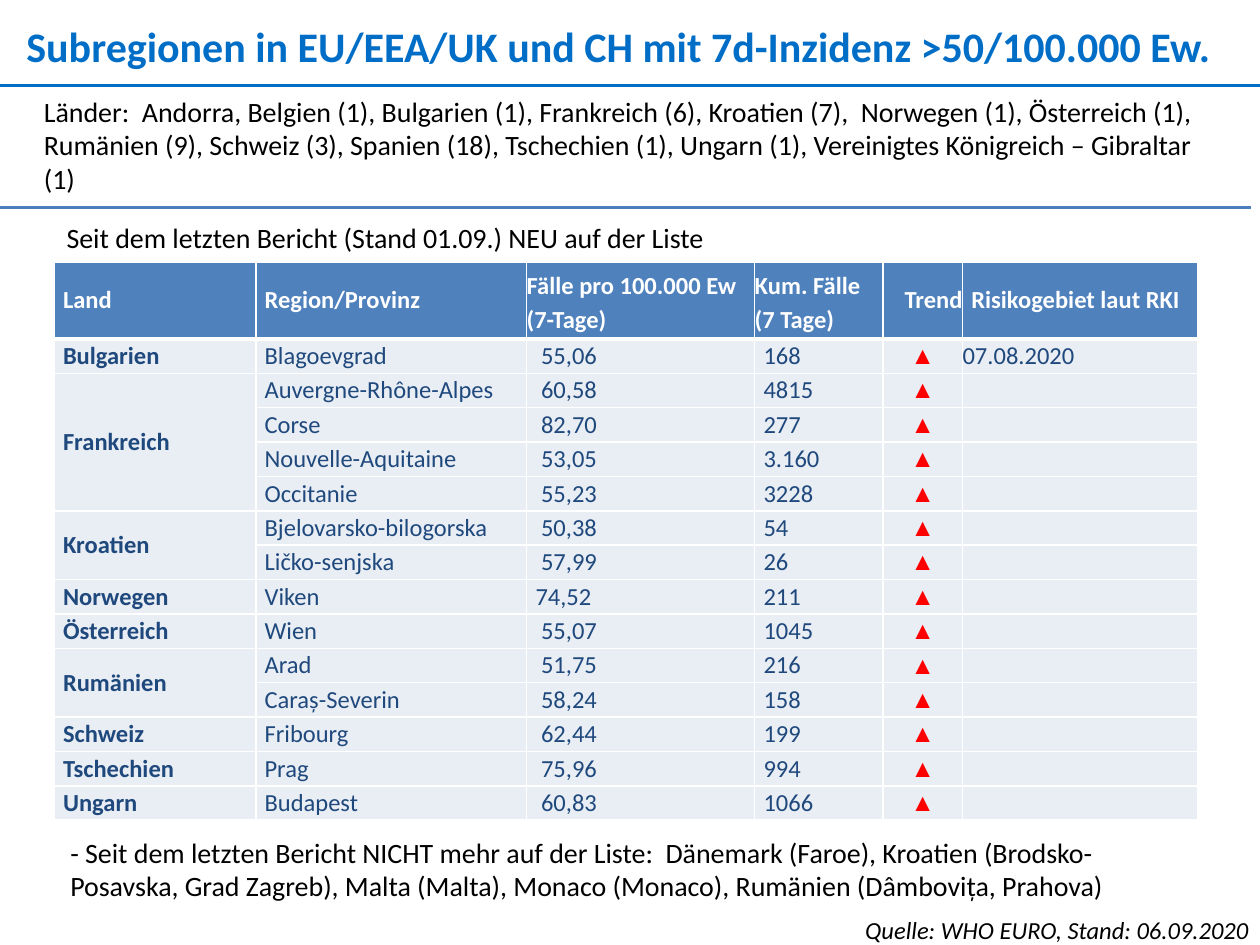
from pptx import Presentation
from pptx.dml.color import RGBColor
from pptx.enum.shapes import MSO_CONNECTOR as Conn
from pptx.enum.text import MSO_ANCHOR as Anchor, PP_ALIGN as Align
from pptx.oxml import parse_xml
from pptx.oxml.ns import nsdecls
from pptx.util import Inches, Pt

BLUE = RGBColor(0x00, 0x6E, 0xC7)
STEEL = RGBColor(0x4B, 0x7E, 0xBC)
HEAD = RGBColor(0x4F, 0x81, 0xBD)
PALE = RGBColor(0xE9, 0xED, 0xF4)
NAVY = RGBColor(0x1F, 0x49, 0x7D)
RED = RGBColor(0xFF, 0x00, 0x00)
BLACK = RGBColor(0x00, 0x00, 0x00)
WHITE = RGBColor(0xFF, 0xFF, 0xFF)

TITLE = "Subregionen in EU/EEA/UK und CH mit 7d-Inzidenz >50/100.000 Ew."
LANDS = ("Länder:  Andorra, Belgien (1), Bulgarien (1), Frankreich (6), "
         "Kroatien (7),  Norwegen (1), Österreich (1), Rumänien (9), "
         "Schweiz (3), Spanien (18), Tschechien (1), Ungarn (1), "
         "Vereinigtes Königreich – Gibraltar (1)")
NEW = "Seit dem letzten Bericht (Stand 01.09.) NEU auf der Liste"
GONE = ("- Seit dem letzten Bericht NICHT mehr auf der Liste:  "
        "Dänemark (Faroe), Kroatien (Brodsko-Posavska, Grad Zagreb), "
        "Malta (Malta), Monaco (Monaco), Rumänien (Dâmbovița, Prahova)")
SOURCE = "Quelle: WHO EURO, Stand: 06.09.2020"

HEADS = ["Land", "Region/Provinz", "Fälle pro 100.000 Ew\n(7-Tage)",
         "Kum. Fälle\n(7 Tage)", "Trend", "Risikogebiet laut RKI"]
WIDTHS = [1.6, 2.15, 1.81, 1.02, 0.63, 1.87]
# Land: (region, incidence, cases, risk area since)
DATA = {
    "Bulgarien": [("Blagoevgrad", " 55,06", "168", "07.08.2020")],
    "Frankreich": [("Auvergne-Rhône-Alpes", " 60,58", "4815", ""),
                   ("Corse", " 82,70", "277", ""),
                   ("Nouvelle-Aquitaine", " 53,05", "3.160", ""),
                   ("Occitanie", " 55,23", "3228", "")],
    "Kroatien": [("Bjelovarsko-bilogorska", " 50,38", "54", ""),
                 ("Ličko-senjska", " 57,99", "26", "")],
    "Norwegen": [("Viken", "74,52", "211", "")],
    "Österreich": [("Wien", " 55,07", "1045", "")],
    "Rumänien": [("Arad", " 51,75", "216", ""),
                 ("Caraș-Severin", " 58,24", "158", "")],
    "Schweiz": [("Fribourg", " 62,44", "199", "")],
    "Tschechien": [("Prag", " 75,96", "994", "")],
    "Ungarn": [("Budapest", " 60,83", "1066", "")],
}


def style(para, size, color, bold=False, italic=False, face="Calibri"):
    font = para.font
    font.name, font.size = face, Pt(size)
    font.bold, font.italic = bold, italic
    font.color.rgb = color


def add_text(slide, box, text, size=16, color=BLACK, bold=False,
             italic=False, align=Align.LEFT, inset=None):
    frame = slide.shapes.add_textbox(*map(Inches, box)).text_frame
    frame.word_wrap = True
    if inset is not None:
        frame.margin_left = frame.margin_right = Inches(inset)
        frame.margin_top = frame.margin_bottom = Inches(inset)
    para = frame.paragraphs[0]
    para.text, para.alignment = text, align
    style(para, size, color, bold, italic)


def add_rule(slide, left, right, y, color, width):
    rule = slide.shapes.add_connector(
        Conn.STRAIGHT, Inches(left), Inches(y), Inches(right), Inches(y))
    rule.line.color.rgb = color
    rule.line.width = Pt(width)
    rule._element.spPr.append(parse_xml(f"<a:effectLst {nsdecls('a')}/>"))


def set_edges(cell, base):
    """White borders; base is the width of the bottom one in points."""
    props = cell._tc.get_or_add_tcPr()
    for i, side in enumerate("LRTB"):
        width = Pt(base if side == "B" else 1)
        props.insert(i, parse_xml(
            f'<a:ln{side} {nsdecls("a")} w="{width}"><a:solidFill>'
            f'<a:srgbClr val="{WHITE}"/></a:solidFill></a:ln{side}>'))


def fill_cell(cell, text, fill, color, bold=False, align=Align.LEFT,
              face="Calibri", indent=True, space=None):
    cell.margin_left = cell.margin_right = 0
    cell.margin_top = cell.margin_bottom = 0
    cell.vertical_anchor = Anchor.MIDDLE
    cell.fill.solid()
    cell.fill.fore_color.rgb = fill
    set_edges(cell, 3 if fill == HEAD else 1)
    cell.text = text
    for para in cell.text_frame.paragraphs:
        para.alignment = align
        style(para, 14, color, bold, face=face)
        if space:
            para.line_spacing = space
        if indent:
            para.space_before = para.space_after = Pt(2)
            para._p.get_or_add_pPr().set("marL", str(Inches(0.07)))


def add_grid(slide):
    count = sum(map(len, DATA.values()))
    table = slide.shapes.add_table(
        count + 1, len(HEADS), Inches(0.43), Inches(2.08),
        Inches(sum(WIDTHS)), Inches(4.43)).table
    table.horz_banding = False
    for col, width in zip(table.columns, WIDTHS):
        col.width = Inches(width)
    for i, row in enumerate(table.rows):
        row.height = Inches(3.82 / count if i else 0.61)

    # Header
    for i, text in enumerate(HEADS):
        two = "\n" in text
        fill_cell(table.cell(0, i), text, HEAD, WHITE, True,
                  Align.RIGHT if text == "Trend" else Align.LEFT,
                  indent=not two, space=1.15 if two else None)

    # One block of rows for each land
    top = 1
    for land, rows in DATA.items():
        for r, (area, rate, cases, risk) in enumerate(rows, top):
            fill_cell(table.cell(r, 0), land if r == top else "",
                      PALE, NAVY, True)
            for c, text in enumerate((area, rate, cases), 1):
                fill_cell(table.cell(r, c), text, PALE, NAVY)
            fill_cell(table.cell(r, 4), "▲", PALE, RED, False,
                      Align.CENTER, "Arial", False)
            fill_cell(table.cell(r, 5), risk, PALE, NAVY, indent=False)
        if len(rows) > 1:
            table.cell(top, 0).merge(table.cell(top + len(rows) - 1, 0))
        top += len(rows)


def main():
    prs = Presentation()
    prs.slide_width, prs.slide_height = Inches(10), Inches(7.5)
    slide = prs.slides.add_slide(prs.slide_layouts[6])

    # Title and source
    add_text(slide, (0.21, 0.16, 9.63, 0.4), TITLE, 24, BLUE, True, inset=0)
    add_rule(slide, 0, 10, 0.68, BLUE, 1.5)
    add_text(slide, (5.39, 7.21, 4.62, 0.34), SOURCE, 14, italic=True,
             align=Align.RIGHT)

    # Summary of lands
    add_text(slide, (0.43, 1.7, 7.95, 0.37), NEW)
    add_text(slide, (0.25, 0.7, 9.56, 0.91), LANDS)
    add_rule(slide, -0.09, 9.93, 1.65, STEEL, 1.75)

    # Table and closing remark
    add_grid(slide)
    add_text(slide, (0.46, 6.58, 8.9, 0.64), GONE)
    prs.save("out.pptx")


if __name__ == "__main__":
    main()
